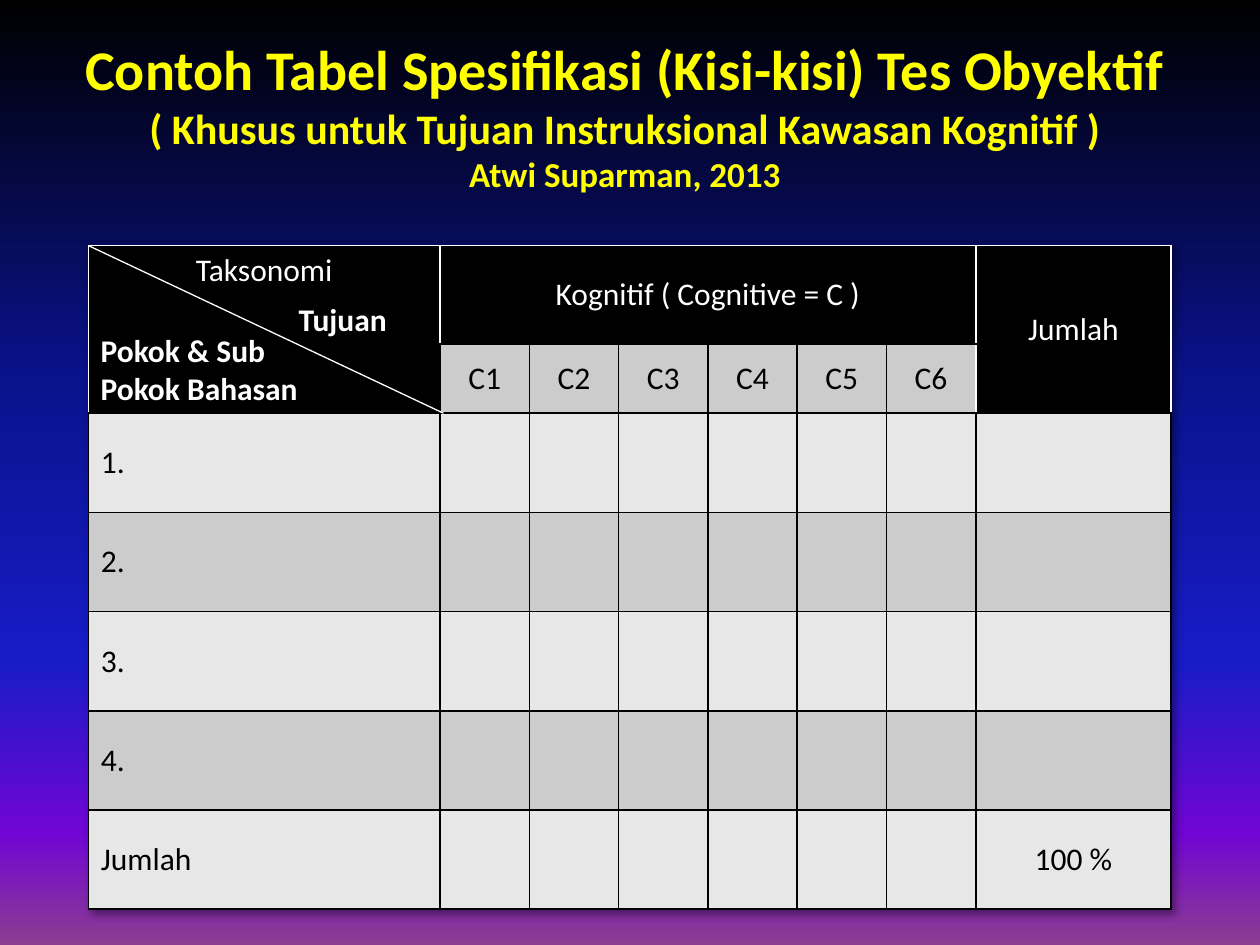
from dataclasses import dataclass

from lxml import etree
from pptx import Presentation
from pptx.dml.color import RGBColor
from pptx.enum.shapes import MSO_CONNECTOR
from pptx.enum.text import MSO_ANCHOR, PP_ALIGN
from pptx.oxml import parse_xml
from pptx.oxml.ns import nsdecls, qn
from pptx.util import Cm, Pt

BLANK_LAYOUT = 6
LEFT, CENTER = PP_ALIGN.LEFT, PP_ALIGN.CENTER
MIDDLE, TOP = MSO_ANCHOR.MIDDLE, MSO_ANCHOR.TOP
STRAIGHT = MSO_CONNECTOR.STRAIGHT


@dataclass(frozen=True)
class Theme:
    font: str = "Calibri"
    title: str = "FFFF00"
    white: str = "FFFFFF"
    black: str = "000000"
    light: str = "E7E7E7"
    dark: str = "CCCCCC"
    title_sizes: tuple = (32, 24, 20)
    body_size: int = 18
    gradient: tuple = (
        (0, "000000"), (40, "0A128C"), (70, "181CC7"),
        (88, "7005D4"), (100, "8C3D91"),
    )


THEME = Theme()
TABLE_LEFT, TABLE_TOP = 1.78, 4.95
COLUMNS = [7.09] + [1.8] * 6 + [3.94]
ROWS = [1.98, 1.4] + [2] * 5
LEVELS = ["C1", "C2", "C3", "C4", "C5", "C6"]
TOPICS = ["1.", "2.", "3.", "4.", "Jumlah"]


def style_paragraph(para, size, color, bold=False, align=LEFT):
    para.alignment = align
    para.font.name = THEME.font
    para.font.size = Pt(size)
    para.font.bold = bold
    para.font.color.rgb = RGBColor.from_string(color)


def paint_background(page):
    fill = page.background.fill
    fill.gradient()
    fill.gradient_angle = 270
    stops = page.element.find(".//" + qn("a:gsLst"))
    for stop in list(stops):
        stops.remove(stop)
    for position, color in THEME.gradient:
        stop = etree.SubElement(stops, qn("a:gs"), pos=str(position * 1000))
        etree.SubElement(stop, qn("a:srgbClr"), val=color)


def add_text(page, left, top, width, height, lines, sizes, color, align=LEFT):
    box = page.shapes.add_textbox(Cm(left), Cm(top), Cm(width), Cm(height))
    frame = box.text_frame
    frame.word_wrap = True
    frame.text = "\n".join(lines)
    for para, size in zip(frame.paragraphs, sizes):
        style_paragraph(para, size, color, True, align)


def set_borders(cell, color):
    properties = cell._tc.get_or_add_tcPr()
    for side in "LRTB":
        side_color = THEME.black if side == "B" else color
        properties.append(parse_xml(
            f'<a:ln{side} {nsdecls("a")} w="12700"><a:solidFill>'
            f'<a:srgbClr val="{side_color}"/></a:solidFill></a:ln{side}>'
        ))


def fill_cell(cell, text, fill, color, border, align=CENTER, anchor=MIDDLE):
    set_borders(cell, border)
    cell.fill.solid()
    cell.fill.fore_color.rgb = RGBColor.from_string(fill)
    cell.vertical_anchor = anchor
    cell.text = text
    style_paragraph(cell.text_frame.paragraphs[0], THEME.body_size, color, align=align)


def add_table_shadow(table):
    table._tbl.tblPr.insert(0, parse_xml(
        f'<a:effectLst {nsdecls("a")}>'
        '<a:outerShdw blurRad="50800" dist="38100" dir="2700000" algn="tl">'
        '<a:srgbClr val="000000"><a:alpha val="40000"/></a:srgbClr>'
        '</a:outerShdw></a:effectLst>'
    ))


def add_grid(page):
    frame = page.shapes.add_table(
        len(ROWS), len(COLUMNS), Cm(TABLE_LEFT), Cm(TABLE_TOP),
        Cm(sum(COLUMNS)), Cm(sum(ROWS)),
    )
    table = frame.table
    table.first_row = table.horz_banding = False
    for column, width in zip(table.columns, COLUMNS):
        column.width = Cm(width)
    for row, height in zip(table.rows, ROWS):
        row.height = Cm(height)

    last = len(COLUMNS) - 1
    texts = [
        ["Taksonomi", "Kognitif ( Cognitive = C )"] + [""] * 5 + ["Jumlah"],
        [""] + LEVELS + [""],
    ] + [[topic] + [""] * last for topic in TOPICS]
    texts[-1][last] = "100 %"
    for r, row_texts in enumerate(texts):
        for c, text in enumerate(row_texts):
            header = r == 0 or (r == 1 and c in (0, last))
            band = THEME.dark if r % 2 else THEME.light
            fill_cell(
                table.cell(r, c), text,
                THEME.black if header else band,
                THEME.white if header else THEME.black,
                THEME.white if header else THEME.black,
                LEFT if r > 1 and c == 0 else CENTER,
                TOP if r == 0 and c == 0 else MIDDLE,
            )
    table.cell(0, 0).merge(table.cell(1, 0))
    table.cell(0, 1).merge(table.cell(0, last - 1))
    table.cell(0, last).merge(table.cell(1, last))
    add_table_shadow(table)


def add_diagonal(page):
    line = page.shapes.add_connector(
        STRAIGHT, Cm(TABLE_LEFT + 7.16), Cm(TABLE_TOP + sum(ROWS[:2])),
        Cm(TABLE_LEFT), Cm(TABLE_TOP),
    )
    line.line.color.rgb = RGBColor.from_string(THEME.white)
    line.line.width = Pt(0.75)
    etree.SubElement(line._element.spPr, qn("a:effectLst"))


def main():
    deck = Presentation()
    deck.slide_width, deck.slide_height = Cm(25.4), Cm(19.05)
    page = deck.slides.add_slide(deck.slide_layouts[BLANK_LAYOUT])
    paint_background(page)
    add_text(page, 0.99, 0.58, 23.22, 3.51, [
        "Contoh Tabel Spesifikasi (Kisi-kisi) Tes Obyektif",
        "( Khusus untuk Tujuan Instruksional Kawasan Kognitif )",
        "Atwi Suparman, 2013",
    ], THEME.title_sizes, THEME.title, CENTER)
    add_grid(page)
    add_diagonal(page)
    add_text(page, TABLE_LEFT, 6.55, 6.15, 1.8, ["Pokok & Sub", "Pokok Bahasan"],
             [THEME.body_size] * 2, THEME.white)
    add_text(page, 5.77, 5.92, 2.59, 1.02, ["Tujuan"],
             [THEME.body_size], THEME.white)
    deck.save("out.pptx")


if __name__ == "__main__":
    main()
